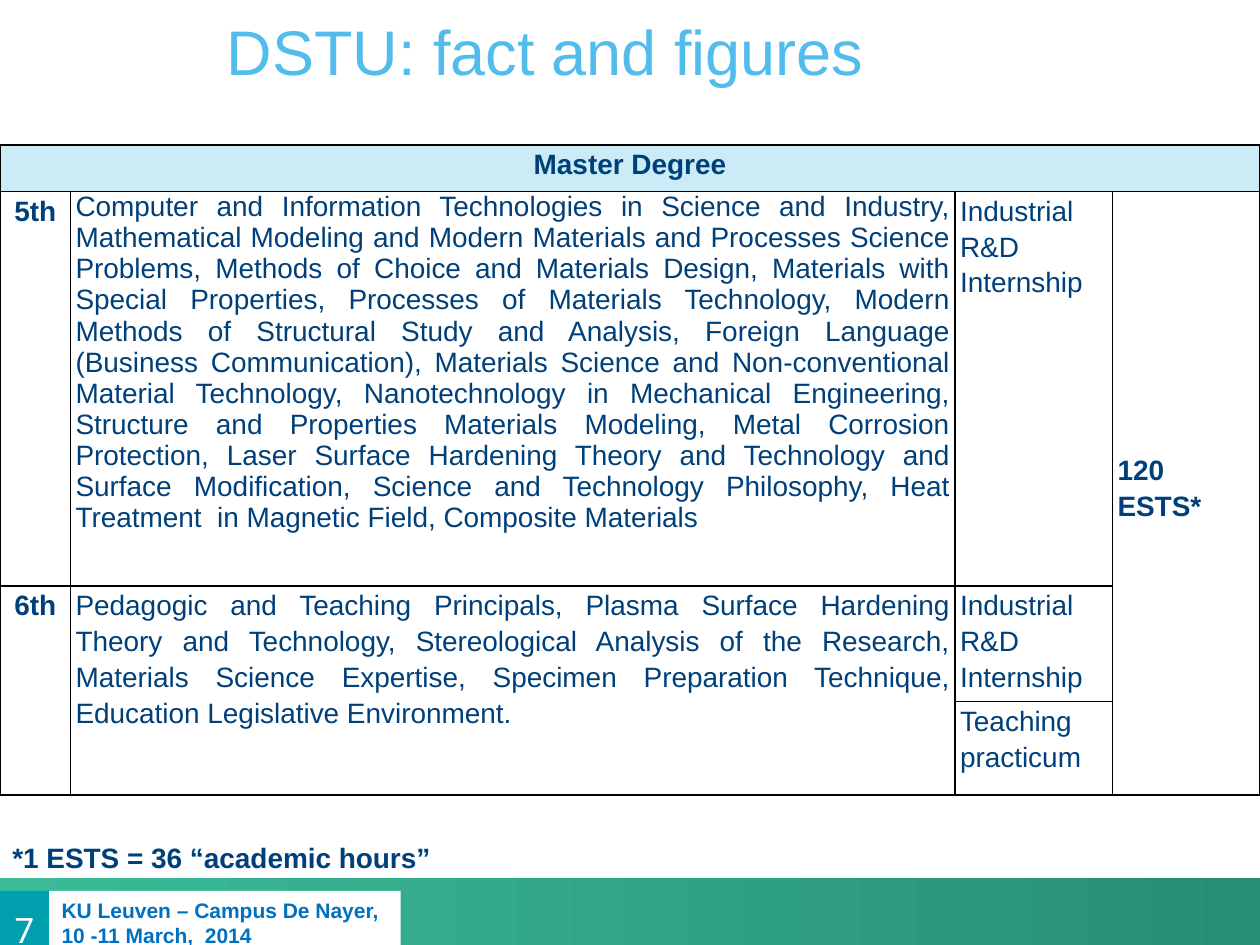
"""Build the DSTU master degree slide."""
from dataclasses import dataclass, field
from typing import Any

from lxml.etree import SubElement
from pptx import Presentation
from pptx.dml.color import RGBColor as Color
from pptx.enum.shapes import MSO_SHAPE as Shape
from pptx.enum.text import MSO_ANCHOR as Anchor, PP_ALIGN as Align
from pptx.oxml.ns import qn
from pptx.util import Emu, Pt

PX = 9144
HUES = {
    "black": "000000", "white": "FFFFFF", "navy": "00407A", "sky": "52BDEC",
    "blue": "0070C0", "teal": "00A0AE", "ice": "CBECF6",
    "mint": "3BBB99", "pine": "278E74",
}
COLS = (56, 702, 125, 117)
ROWS = (37, 313, 74, 74)
FIFTH = (
    "Computer and Information Technologies in Science and Industry, "
    "Mathematical Modeling and Modern Materials and Processes Science Problems, "
    "Methods of Choice and Materials Design, Materials with Special Properties, "
    "Processes of Materials Technology, Modern Methods of Structural Study and Analysis, "
    "Foreign Language (Business Communication), "
    "Materials Science and Non-conventional Material Technology, "
    "Nanotechnology in Mechanical Engineering, Structure and Properties Materials Modeling, "
    "Metal Corrosion Protection, "
    "Laser Surface Hardening Theory and Technology and Surface Modification, "
    "Science and Technology Philosophy, Heat Treatment  in Magnetic Field, Composite Materials"
)
SIXTH = (
    "Pedagogic and Teaching Principals, Plasma Surface Hardening Theory and Technology, "
    "Stereological Analysis of the Research, Materials Science Expertise, "
    "Specimen Preparation Technique, Education Legislative Environment."
)


@dataclass
class Style:
    size: int = 16
    hue: str = "navy"
    bold: bool = False
    face: str = "Arial"
    align: Align = Align.LEFT
    space: float = 1.0


@dataclass
class Box:
    area: tuple[int, int, int, int]
    text: str
    style: Style
    fill: str = ""
    anchor: Anchor = Anchor.MIDDLE
    pads: tuple[int, int, int, int] = (10, 5, 10, 5)


@dataclass
class Cell:
    row: int
    col: int
    text: str
    style: Style
    span: tuple[int, int] = (1, 1)
    fill: str = ""
    top: int = 0


@dataclass
class Grid:
    area: tuple[int, int, int, int]
    cells: list[Cell] = field(default_factory=list)


HEAD = Style(bold=True, align=Align.CENTER, space=1.15)
LOOSE = Style(align=Align.JUSTIFY, space=1.15)
BOXES = (
    Box((0, 707, 39, 50), "7", Style(20, "white", face="Roboto", align=Align.CENTER),
        "teal", pads=(0, 12, 0, 0)),
    Box((39, 707, 279, 50), "KU Leuven – Campus De Nayer,\n10 -11 March,  2014",
        Style(12, "blue", True), "white"),
    Box((180, 0, 578, 70), "DSTU: fact and figures", Style(36, "sky"),
        anchor=Anchor.BOTTOM, pads=(0, 0, 0, 0)),
    Box((0, 662, 356, 37), "*1 ESTS = 36 “academic hours”", Style(bold=True)),
)
GRID = Grid((0, 115, sum(COLS), sum(ROWS)), [
    Cell(0, 0, "Master Degree", HEAD, (1, 4), "ice"),
    Cell(1, 0, "5th", HEAD),
    Cell(1, 1, FIFTH, Style(align=Align.JUSTIFY)),
    Cell(1, 2, "Industrial R&D Internship", LOOSE),
    Cell(1, 3, "120 ESTS*", Style(bold=True, space=1.15), (3, 1), top=206),
    Cell(2, 0, "6th", HEAD, (2, 1)),
    Cell(2, 1, SIXTH, LOOSE, (2, 1)),
    Cell(2, 2, "Industrial R&D Internship", LOOSE),
    Cell(3, 2, "Teaching practicum", LOOSE),
])


def scale(area: tuple[int, ...]) -> list[Emu]:
    return [Emu(n * PX) for n in area]


def tint(name: str) -> Color:
    return Color.from_string(HUES[name])


def apply(item: Any, form: dict[str, Any]) -> None:
    for key, value in form.items():
        setattr(item, key, value)


def pad(item: Any, pads: tuple[int, ...]) -> None:
    keys = ("margin_left", "margin_top", "margin_right", "margin_bottom")
    apply(item, dict(zip(keys, scale(pads))))


def paint(fill: Any, name: str) -> None:
    if name:
        fill.solid()
        fill.fore_color.rgb = tint(name)
    else:
        fill.background()


def write(frame: Any, text: str, style: Style) -> None:
    para = frame.paragraphs[0]
    para.text = text
    apply(para, {"alignment": style.align, "line_spacing": style.space})
    for run in para.runs:
        apply(run.font, {"size": Pt(style.size), "bold": style.bold, "name": style.face})
        run.font.color.rgb = tint(style.hue)


def draw_band(slide: Any) -> None:
    band = slide.shapes.add_shape(Shape.RECTANGLE, *scale((0, 697, 1000, 60)))
    band.shadow.inherit = False
    band.line.fill.background()
    band.fill.gradient()
    band.fill.gradient_angle = 0
    for stop, name in zip(band.fill.gradient_stops, ("mint", "pine")):
        stop.color.rgb = tint(name)


def draw_box(slide: Any, box: Box) -> None:
    if box.fill:
        shape = slide.shapes.add_shape(Shape.RECTANGLE, *scale(box.area))
        shape.shadow.inherit = False
        shape.line.fill.background()
        paint(shape.fill, box.fill)
    else:
        shape = slide.shapes.add_textbox(*scale(box.area))
    frame = shape.text_frame
    apply(frame, {"word_wrap": True, "vertical_anchor": box.anchor})
    pad(frame, box.pads)
    write(frame, box.text, box.style)


def edge(cell: Any) -> None:
    props = cell._tc.get_or_add_tcPr()
    for spot, side in enumerate(("lnL", "lnR", "lnT", "lnB")):
        line = SubElement(props, qn(f"a:{side}"), w=str(Pt(1)))
        fill = SubElement(line, qn("a:solidFill"))
        SubElement(fill, qn("a:srgbClr"), val=HUES["black"])
        props.insert(spot, line)


def draw_grid(slide: Any, grid: Grid) -> None:
    table = slide.shapes.add_table(len(ROWS), len(COLS), *scale(grid.area)).table
    apply(table, {"first_row": False, "horz_banding": False})
    for col, width in zip(table.columns, scale(COLS)):
        col.width = width
    for row, height in zip(table.rows, scale(ROWS)):
        row.height = height
    for cell in table.iter_cells():
        paint(cell.fill, "")
        pad(cell, (4, 0, 4, 0))
        edge(cell)
    for part in grid.cells:
        cell = table.cell(part.row, part.col)
        if part.span != (1, 1):
            down, over = part.span
            cell.merge(table.cell(part.row + down - 1, part.col + over - 1))
        paint(cell.fill, part.fill)
        pad(cell, (4, part.top, 4, 0))
        write(cell.text_frame, part.text, part.style)


def main() -> None:
    deck = Presentation()
    apply(deck, dict(zip(("slide_width", "slide_height"), scale((1000, 750)))))
    slide = deck.slides.add_slide(deck.slide_layouts[6])
    draw_band(slide)
    for box in BOXES:
        draw_box(slide, box)
    draw_grid(slide, GRID)
    deck.save("out.pptx")


if __name__ == "__main__":
    main()
